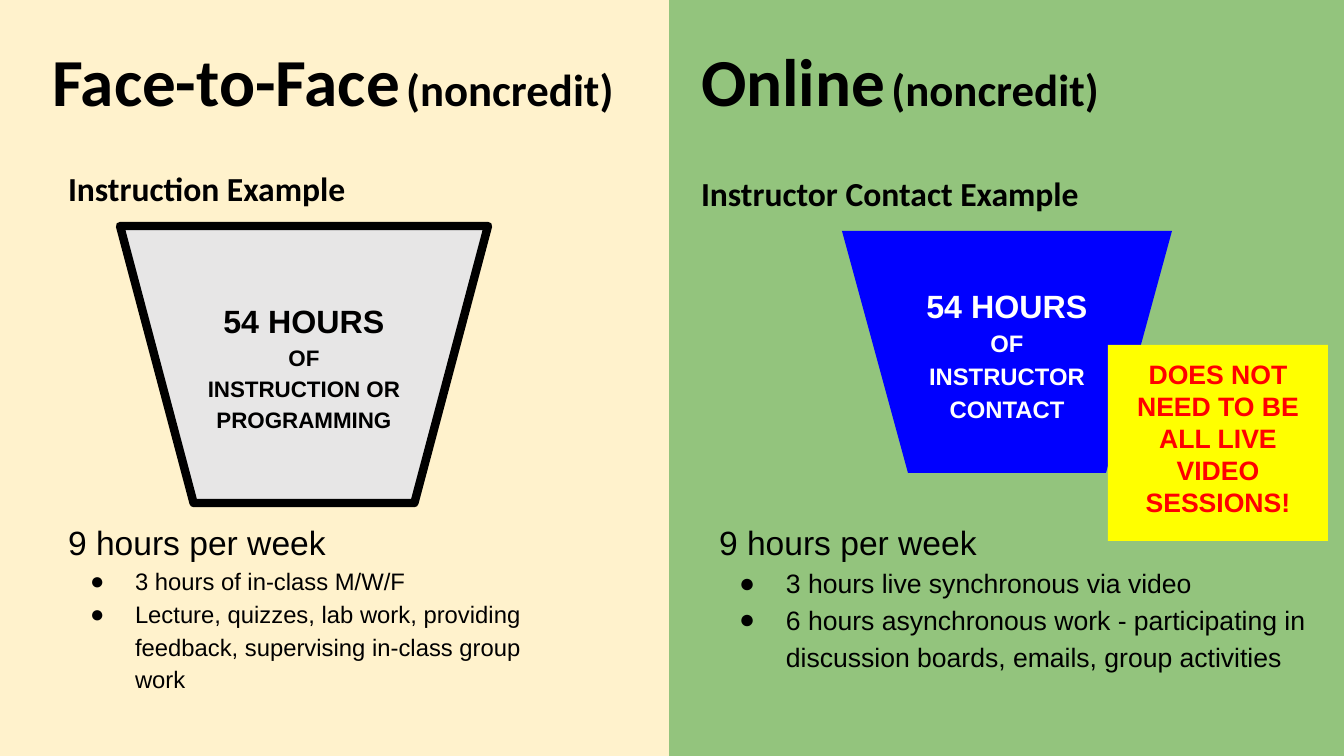
from lxml.etree import SubElement
from pptx import Presentation
from pptx.dml.color import RGBColor
from pptx.enum.shapes import MSO_SHAPE
from pptx.enum.text import MSO_ANCHOR, MSO_AUTO_SIZE, PP_ALIGN
from pptx.oxml.ns import qn
from pptx.util import Emu, Pt

PIXEL = 914400 / 100.8
PAGE_WIDTH, PAGE_HEIGHT = 1344, 756
PANEL_SPLIT = 669
INSET = 13

# Spans are (text, point size)
COLUMNS = [
    {
        "panel": (0, PANEL_SPLIT, "FFF2CC"),
        "title": "Face-to-Face",
        "title_at": (39, 52, 627, 81),
        "heading": "Instruction Example",
        "heading_at": (55, 149, 563, 70),
        "bucket_at": (120, 226, 368, 277),
        "bucket_style": {"fill": "E7E6E6", "line": "000000"},
        "bucket": [[("54 HOURS", 23)], [("OF", 16)],
                   [("INSTRUCTION OR PROGRAMMING", 16)]],
        "bucket_color": "000000",
        "list_at": (55, 503, 500, 210),
        "list_size": 17,
        "hanging": 45,
        "list": ["3 hours of in-class M/W/F",
                 "Lecture, quizzes, lab work, providing feedback, "
                 "supervising in-class group work"],
    },
    {
        "panel": (PANEL_SPLIT, PAGE_WIDTH - PANEL_SPLIT, "93C47D"),
        "title": "Online",
        "title_at": (688, 52, 627, 81),
        "heading": "Instructor Contact Example",
        "heading_at": (688, 154, 640, 70),
        "bucket_at": (842, 231, 330, 242),
        "bucket_style": {"fill": "0000FF"},
        "bucket": [[("54 HOURS", 23), (" OF INSTRUCTOR CONTACT", 17)]],
        "bucket_color": "FFFFFF",
        "list_at": (706, 503, 615, 210),
        "list_size": 19,
        "hanging": 47,
        "list": ["3 hours live synchronous via video",
                 "6 hours asynchronous work - participating in discussion "
                 "boards, emails, group activities"],
    },
]
WEEKLY_LOAD = ("9 hours per week", 24)
NOTICE = ("DOES NOT NEED TO BE ALL LIVE VIDEO SESSIONS!", 19)
NOTICE_AT = (1108, 345, 220, 196)


def px(length):
    return Emu(round(length * PIXEL))


def color(value):
    return RGBColor.from_string(value)


def place(box, at):
    box.left, box.top, box.width, box.height = map(px, at)


def add_block(page, kind, at, fill, line=None):
    block = page.shapes.add_shape(kind, *map(px, at))
    block.shadow.inherit = False
    block.fill.solid()
    block.fill.fore_color.rgb = color(fill)
    if line:
        block.line.color.rgb = color(line)
        block.line.width = Pt(6)
        SubElement(block.line._get_or_add_ln(), qn("a:round"))
    else:
        block.line.fill.background()
    return block


def set_bullet(para, hanging):
    """Give the paragraph a round bullet, or none when hanging is 0."""
    properties = para._p.get_or_add_pPr()
    properties.set("marL", str(px(67) if hanging else 0))
    properties.set("indent", str(-px(hanging)))
    if hanging:
        bullet_color = SubElement(properties, qn("a:buClr"))
        SubElement(bullet_color, qn("a:srgbClr"), val="000000")
        SubElement(properties, qn("a:buFont"), typeface="Arial")
        SubElement(properties, qn("a:buChar"), char="●")
    else:
        SubElement(properties, qn("a:buNone"))


def write(box, paragraphs, font="Arial", ink="000000", bold=True,
          align=PP_ALIGN.LEFT, anchor=MSO_ANCHOR.TOP, spacing=1.15, hanging=0):
    """Fill the box with lists of spans; paragraphs after the first hang if asked."""
    frame = box.text_frame
    frame.word_wrap = True
    frame.auto_size = MSO_AUTO_SIZE.NONE
    frame.vertical_anchor = anchor
    frame.margin_left = frame.margin_right = px(INSET)
    frame.margin_top = frame.margin_bottom = px(INSET)
    for index, spans in enumerate(paragraphs):
        para = frame.add_paragraph() if index else frame.paragraphs[0]
        set_bullet(para, hanging if index else 0)
        para.alignment = align
        para.line_spacing = spacing
        para.space_before = para.space_after = Pt(0)
        for text, size in spans:
            span = para.add_run()
            span.text = text
            span.font.name = font
            span.font.size = Pt(size)
            span.font.bold = bold
            span.font.color.rgb = color(ink)


def add_column(page, column, title, heading, listing):
    left, width, fill = column["panel"]
    panel = add_block(page, MSO_SHAPE.RECTANGLE, (left, 0, width, PAGE_HEIGHT), fill)
    page.shapes._spTree.insert(2, panel._element)  # behind the placeholders

    place(title, column["title_at"])
    write(title, [[(column["title"], 48), (" ", 19), ("(noncredit)", 32)]],
          font="Calibri", anchor=MSO_ANCHOR.BOTTOM, spacing=1.0)
    place(heading, column["heading_at"])
    write(heading, [[(column["heading"], 24)]], font="Calibri")

    bucket = add_block(page, MSO_SHAPE.FLOWCHART_MANUAL_OPERATION,
                       column["bucket_at"], **column["bucket_style"])
    write(bucket, column["bucket"], ink=column["bucket_color"],
          align=PP_ALIGN.CENTER, anchor=MSO_ANCHOR.MIDDLE)

    items = [[(item, column["list_size"])] for item in column["list"]]
    place(listing, column["list_at"])
    write(listing, [[WEEKLY_LOAD]] + items, bold=False, hanging=column["hanging"])


def main():
    deck = Presentation()
    deck.slide_width, deck.slide_height = px(PAGE_WIDTH), px(PAGE_HEIGHT)
    page = deck.slides.add_slide(deck.slide_layouts.get_by_name("Comparison"))
    holders = page.placeholders
    online_title = page.shapes.add_textbox(0, 0, 0, 0)
    titles = [page.shapes.title, online_title]
    headings = [holders[1], holders[3]]
    listings = [holders[2], holders[4]]
    for parts in zip(COLUMNS, titles, headings, listings):
        add_column(page, *parts)

    notice = add_block(page, MSO_SHAPE.RECTANGLE, NOTICE_AT, "FFFF00")
    write(notice, [[NOTICE]], ink="FF0000", align=PP_ALIGN.CENTER, spacing=1.0)
    deck.save("out.pptx")


if __name__ == "__main__":
    main()
